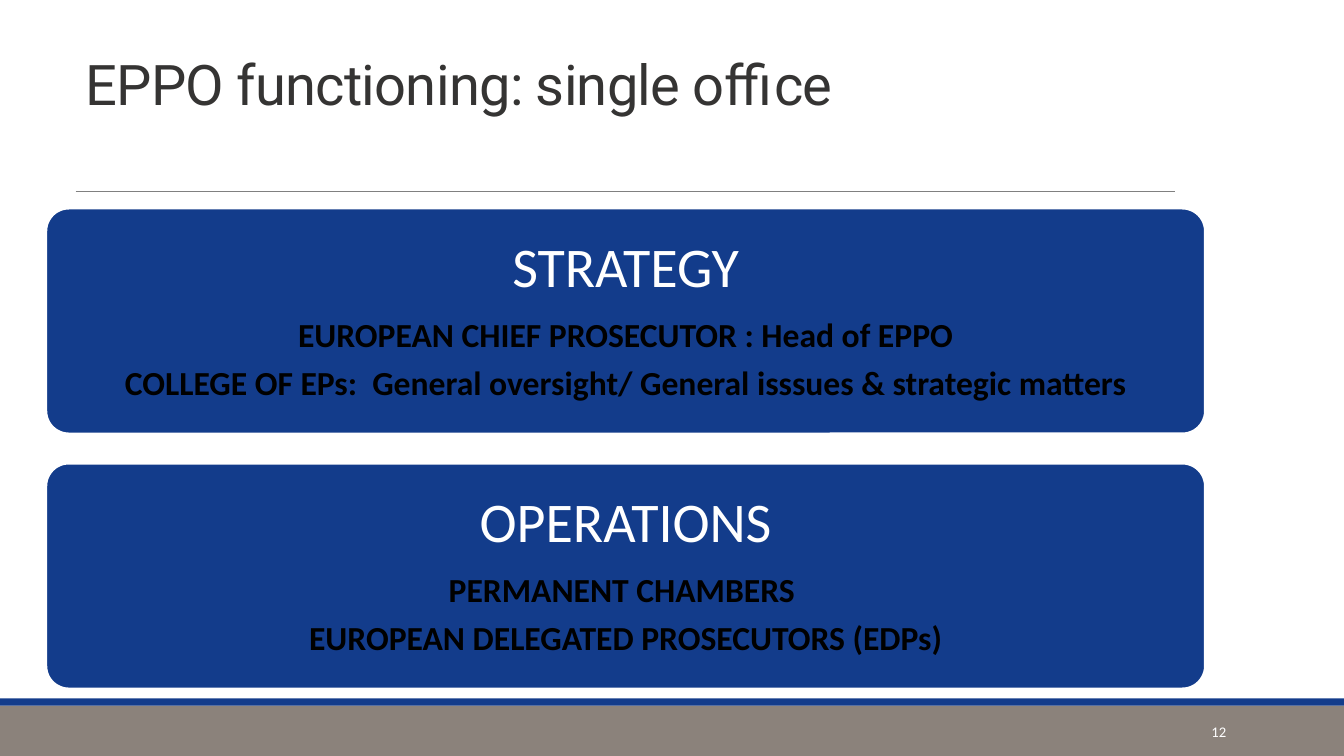
from pptx import Presentation
from pptx import util as u
from pptx.dml.color import RGBColor
from pptx.enum import shapes, text
from pptx.oxml.ns import qn
from lxml import etree

COLOURS = {
    "navy": "133C8B",
    "taupe": "8B827B",
    "rule": "808080",
    "title": "353433",
    "white": "FFFFFF",
    "black": "000000",
}


class SlideBuilder:
    body_font = "Calibri"
    title_font = "Roboto"

    def __init__(self, slide):
        self.slide = slide

    def colour(self, name):
        return RGBColor.from_string(COLOURS[name])

    def style(self, paragraph, size, colour, family=None, bold=False):
        font = paragraph.font
        font.name = family or self.body_font
        font.size = u.Pt(size)
        font.bold = bold
        font.color.rgb = self.colour(colour)

    def block(self, kind, box, fill, outline=None):
        shape = self.slide.shapes.add_shape(kind, *map(u.Inches, box))
        shape.shadow.inherit = False
        shape.fill.solid()
        shape.fill.fore_color.rgb = self.colour(fill)
        if outline:
            shape.line.color.rgb = self.colour(outline)
            shape.line.width = u.Pt(1.25)
        else:
            shape.line.fill.background()
        return shape

    def band(self, top, height, fill):
        self.block(shapes.MSO_SHAPE.RECTANGLE, (0, top, 13.33, height), fill)

    def rule(self, left, right, y):
        ends = map(u.Inches, (left, y, right, y))
        line = self.slide.shapes.add_connector(shapes.MSO_CONNECTOR.STRAIGHT, *ends)
        line.line.color.rgb = self.colour("rule")
        line.line.width = u.Pt(0.5)
        etree.SubElement(line._element.spPr, qn("a:effectLst"))

    def label(self, box, wording, size, colour, family=None):
        frame = self.slide.shapes.add_textbox(*map(u.Inches, box)).text_frame
        frame.word_wrap = True
        paragraph = frame.paragraphs[0]
        paragraph.text = wording
        self.style(paragraph, size, colour, family)
        return frame

    def title(self, wording):
        frame = self.label((0.75, 0.26, 10.9, 1.59), wording, 40, "title", self.title_font)
        frame.margin_top = u.Inches(0.33)
        heading = frame.paragraphs[0]
        heading.line_spacing = 0.85
        heading.runs[0].font._element.set("spc", "-50")

    def page_number(self, number):
        frame = self.label((10.83, 7.06, 1.43, 0.4), number, 10.5, "white")
        frame.vertical_anchor = text.MSO_ANCHOR.MIDDLE
        frame.paragraphs[0].alignment = text.PP_ALIGN.RIGHT

    def panel(self, top, heading, bodies):
        card = self.block(shapes.MSO_SHAPE.ROUNDED_RECTANGLE,
                          (0.46, top, 11.49, 2.23), "navy", "white")
        card.adjustments[0] = 0.1
        frame = card.text_frame
        frame.word_wrap = True
        frame.vertical_anchor = text.MSO_ANCHOR.MIDDLE
        lines = [heading, *bodies]
        for index, wording in enumerate(lines):
            paragraph = frame.add_paragraph() if index else frame.paragraphs[0]
            paragraph.text = wording
            paragraph.alignment = text.PP_ALIGN.CENTER
            paragraph.line_spacing = 0.9
            size, colour = (24, "black") if index else (40, "white")
            paragraph.space_after = u.Pt(0.35 * size)
            self.style(paragraph, size, colour, bold=index > 0)


PANELS = [
    ("STRATEGY", ["EUROPEAN CHIEF PROSECUTOR : Head of EPPO",
                  "COLLEGE OF EPs:  General oversight/ General isssues & strategic matters"]),
    ("OPERATIONS", ["PERMANENT CHAMBERS ",
                    "EUROPEAN DELEGATED PROSECUTORS (EDPs)"]),
]


def main():
    deck = Presentation()
    deck.slide_width, deck.slide_height = u.Inches(13.33), u.Inches(7.5)
    builder = SlideBuilder(deck.slides.add_slide(deck.slide_layouts[6]))
    builder.band(7, 0.5, "taupe")
    builder.band(6.93, 0.07, "navy")
    builder.rule(0.75, 11.65, 1.9)
    builder.title("EPPO functioning: single office")
    for index, (heading, bodies) in enumerate(PANELS):
        builder.panel(2.07 + index * 2.53, heading, bodies)
    builder.page_number("12")
    deck.save("out.pptx")


if __name__ == "__main__":
    main()
